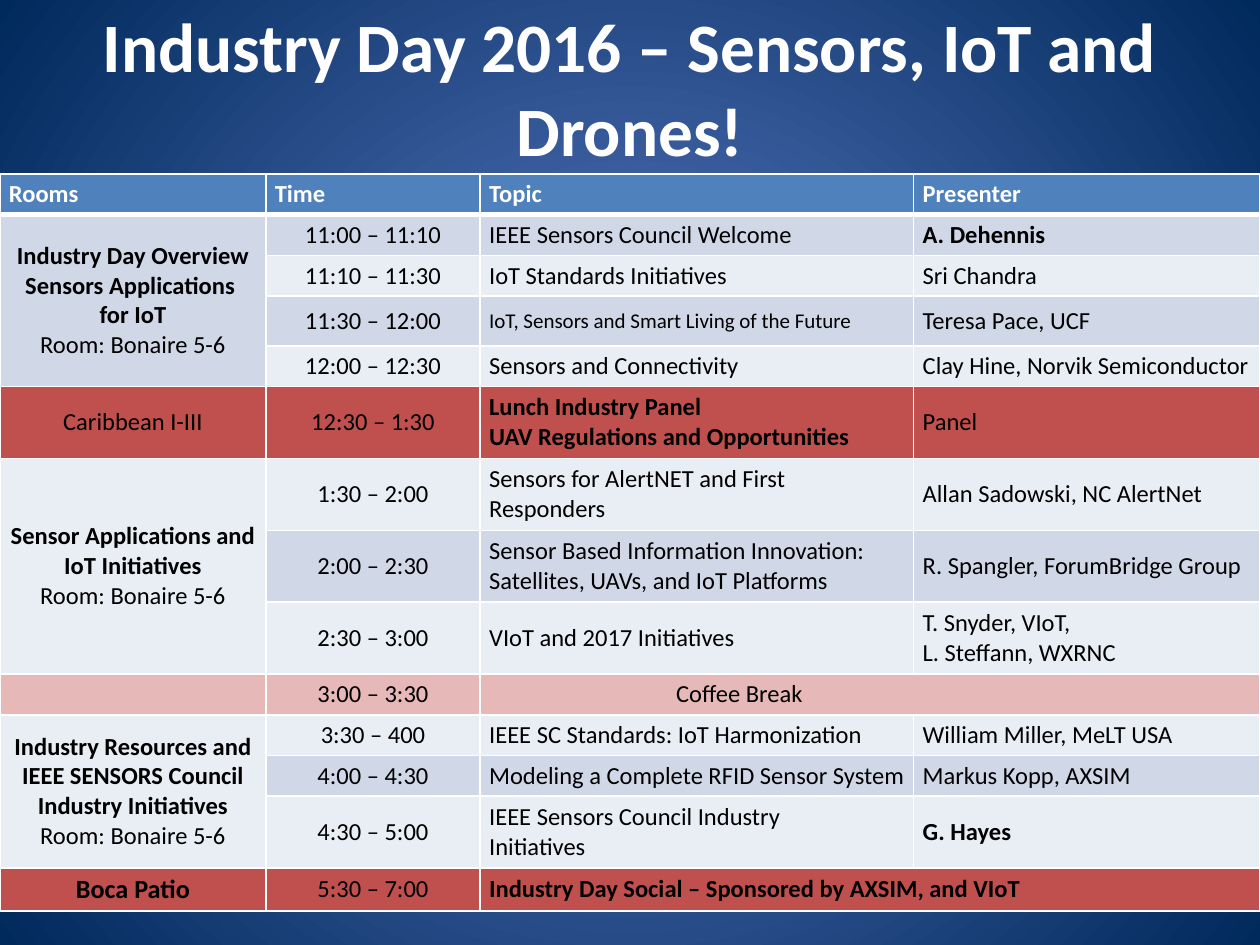
from dataclasses import dataclass

from lxml.etree import SubElement
from pptx import Presentation
from pptx.dml.color import RGBColor
from pptx.enum.text import MSO_ANCHOR as Anchor, MSO_AUTO_SIZE as AutoSize, PP_ALIGN as Align
from pptx.oxml import parse_xml
from pptx.oxml.ns import qn
from pptx.util import Cm, Pt


@dataclass(frozen=True)
class Theme:
    font: str = "Calibri"
    title_size: float = 39.6
    text_size: int = 14
    small_size: int = 12
    venue_size: int = 15
    white: str = "FFFFFF"
    black: str = "000000"
    glow: str = "5E7CC5"
    navy: str = "00295C"
    header: str = "4F81BD"
    bands: tuple = ("E9EDF4", "D0D8E8")
    event: str = "C0504D"
    pause: str = "E6B9B8"


THEME = Theme()
TITLE = "Industry Day 2016 – Sensors, IoT and Drones!"
HEADINGS = ("Rooms", "Time", "Topic", "Presenter")
ROOM = "Room: Bonaire 5-6"
SMALL_TOPIC = "IoT, Sensors and Smart Living of the Future"
COFFEE = "Coffee Break"
VENUE = "Boca Patio"
LUNCH = "Lunch Industry Panel\vUAV Regulations and Opportunities"
SOCIAL = "Industry Day Social – Sponsored by AXSIM, and VIoT"
OVERVIEW = "Industry Day Overview Sensors Applications \vfor IoT"
APPLICATIONS = "Sensor Applications and IoT Initiatives"
RESOURCES = "Industry Resources and IEEE SENSORS Council Industry Initiatives"

# None continues the cell above (rooms) or the cell to the left (presenters).
AGENDA = [
    (f"{OVERVIEW}\n{ROOM}", "11:00 – 11:10", "IEEE Sensors Council Welcome", "A. Dehennis"),
    (None, "11:10 – 11:30", "IoT Standards Initiatives", "Sri Chandra"),
    (None, "11:30 – 12:00", SMALL_TOPIC, "Teresa Pace, UCF"),
    (None, "12:00 – 12:30", "Sensors and Connectivity", "Clay Hine, Norvik Semiconductor"),
    ("Caribbean I-III", "12:30 – 1:30", LUNCH, "Panel"),
    (f"{APPLICATIONS}\n{ROOM}", "1:30 – 2:00",
     "Sensors for AlertNET and First\vResponders", "Allan Sadowski, NC AlertNet"),
    (None, "2:00 – 2:30", "Sensor Based Information Innovation: Satellites, UAVs, and IoT Platforms",
     "R. Spangler, ForumBridge Group"),
    (None, "2:30 – 3:00", "VIoT and 2017 Initiatives", "T. Snyder, VIoT, \vL. Steffann, WXRNC"),
    ("", "3:00 – 3:30", COFFEE, None),
    (f"{RESOURCES}\n{ROOM}", "3:30 – 400",
     "IEEE SC Standards: IoT Harmonization", "William Miller, MeLT USA"),
    (None, "4:00 – 4:30", "Modeling a Complete RFID Sensor System", "Markus Kopp, AXSIM"),
    (None, "4:30 – 5:00", "IEEE Sensors Council Industry\vInitiatives", "G. Hayes"),
    (VENUE, "5:30 – 7:00", SOCIAL, None),
]
BOLD = {*HEADINGS, OVERVIEW, APPLICATIONS, RESOURCES, LUNCH, SOCIAL, VENUE, "A. Dehennis", "G. Hayes"}
SIZES = {SMALL_TOPIC: THEME.small_size, VENUE: THEME.venue_size}
ROW_FILLS = {LUNCH: THEME.event, COFFEE: THEME.pause, SOCIAL: THEME.event}

COLUMN_WIDTHS = (5.36, 4.32, 8.74, 6.98)
SINGLE, DOUBLE = 0.82, 1.45
ROW_HEIGHTS = [SINGLE] * 3 + [1.0, SINGLE] + [DOUBLE] * 4 + [SINGLE] * 3 + [DOUBLE, 0.86]
TABLE_TOP = 3.51
COFFEE_INDENT = 3.95


def style(paragraph, size, color, bold, align):
    paragraph.alignment = align
    font = paragraph.font
    font.name, font.size, font.bold = THEME.font, Pt(size), bold
    font.color.rgb = RGBColor.from_string(color)


def paint_background(slide):
    """Fill the slide with a gradient that darkens outward from its centre."""
    fill = slide.background.fill
    fill.gradient()
    for stop, color in zip(fill.gradient_stops, (THEME.glow, THEME.navy)):
        stop.color.rgb = RGBColor.from_string(color)
    for position, stop in enumerate(fill.gradient_stops):
        stop.position = position
    gradient = slide.background._cSld.find(".//" + qn("a:gradFill"))
    gradient.replace(gradient.find(qn("a:lin")), parse_xml(
        '<a:path xmlns:a="http://schemas.openxmlformats.org/drawingml/2006/main" path="circle">'
        '<a:fillToRect l="50000" t="50000" r="50000" b="50000"/></a:path>'))


def set_borders(cell, bottom_width):
    properties = cell._tc.get_or_add_tcPr()
    widths = {"lnL": 1, "lnR": 1, "lnT": 1, "lnB": bottom_width}
    for index, (side, width) in enumerate(widths.items()):
        line = SubElement(properties, qn(f"a:{side}"), w=str(Pt(width)))
        solid = SubElement(line, qn("a:solidFill"))
        SubElement(solid, qn("a:srgbClr"), val=THEME.white)
        properties.insert(index, line)


def fill_cell(cell, text, column, fill, is_header):
    cell.fill.solid()
    cell.fill.fore_color.rgb = RGBColor.from_string(fill)
    set_borders(cell, 3 if is_header else 1)
    cell.margin_left = Cm(COFFEE_INDENT if text == COFFEE else 0.18)
    cell.margin_right = Cm(0.18)
    cell.margin_top = cell.margin_bottom = Cm(0.1 if text else 0)
    cell.vertical_anchor = Anchor.TOP if is_header else Anchor.MIDDLE
    cell.text = text or ""
    align = Align.CENTER if column < 2 and not is_header else Align.LEFT
    color = THEME.white if is_header else THEME.black
    for paragraph, content in zip(cell.text_frame.paragraphs, (text or "").split("\n")):
        style(paragraph, SIZES.get(content, THEME.text_size), color, content in BOLD, align)


def merge_cells(table):
    for column in range(len(HEADINGS)):
        for index, row in enumerate(AGENDA):
            if column == 0 and row[0] is not None:
                last = index
                while last + 1 < len(AGENDA) and AGENDA[last + 1][0] is None:
                    last += 1
                if last > index:
                    table.cell(index + 1, 0).merge(table.cell(last + 1, 0))
            elif column > 0 and row[column] is None:
                table.cell(index + 1, column - 1).merge(table.cell(index + 1, column))


def add_agenda(slide):
    rows = [HEADINGS, *AGENDA]
    table = slide.shapes.add_table(
        len(rows), len(HEADINGS), Cm(0), Cm(TABLE_TOP),
        Cm(sum(COLUMN_WIDTHS)), Cm(sum(ROW_HEIGHTS))).table
    table.first_row = table.horz_banding = False
    for column, width in zip(table.columns, COLUMN_WIDTHS):
        column.width = Cm(width)
    for index, (row, height) in enumerate(zip(rows, ROW_HEIGHTS)):
        table.rows[index].height = Cm(height)
        is_header = index == 0
        fill = THEME.header if is_header else ROW_FILLS.get(row[2], THEME.bands[index % 2])
        for column, text in enumerate(row):
            fill_cell(table.cell(index, column), text, column, fill, is_header)
    merge_cells(table)


def add_title(slide):
    title = slide.shapes.title
    title.left, title.top, title.width, title.height = Cm(1.75), Cm(0), Cm(21.9), Cm(3.5)
    frame = title.text_frame
    frame.text = TITLE
    frame.word_wrap = True
    frame.auto_size = AutoSize.NONE
    frame.vertical_anchor = Anchor.MIDDLE
    style(frame.paragraphs[0], THEME.title_size, THEME.white, True, Align.CENTER)


def main():
    presentation = Presentation()
    presentation.slide_width, presentation.slide_height = Cm(25.4), Cm(19.05)
    slide = presentation.slides.add_slide(presentation.slide_layouts[5])
    paint_background(slide)
    add_title(slide)
    add_agenda(slide)
    presentation.save("out.pptx")


if __name__ == "__main__":
    main()
